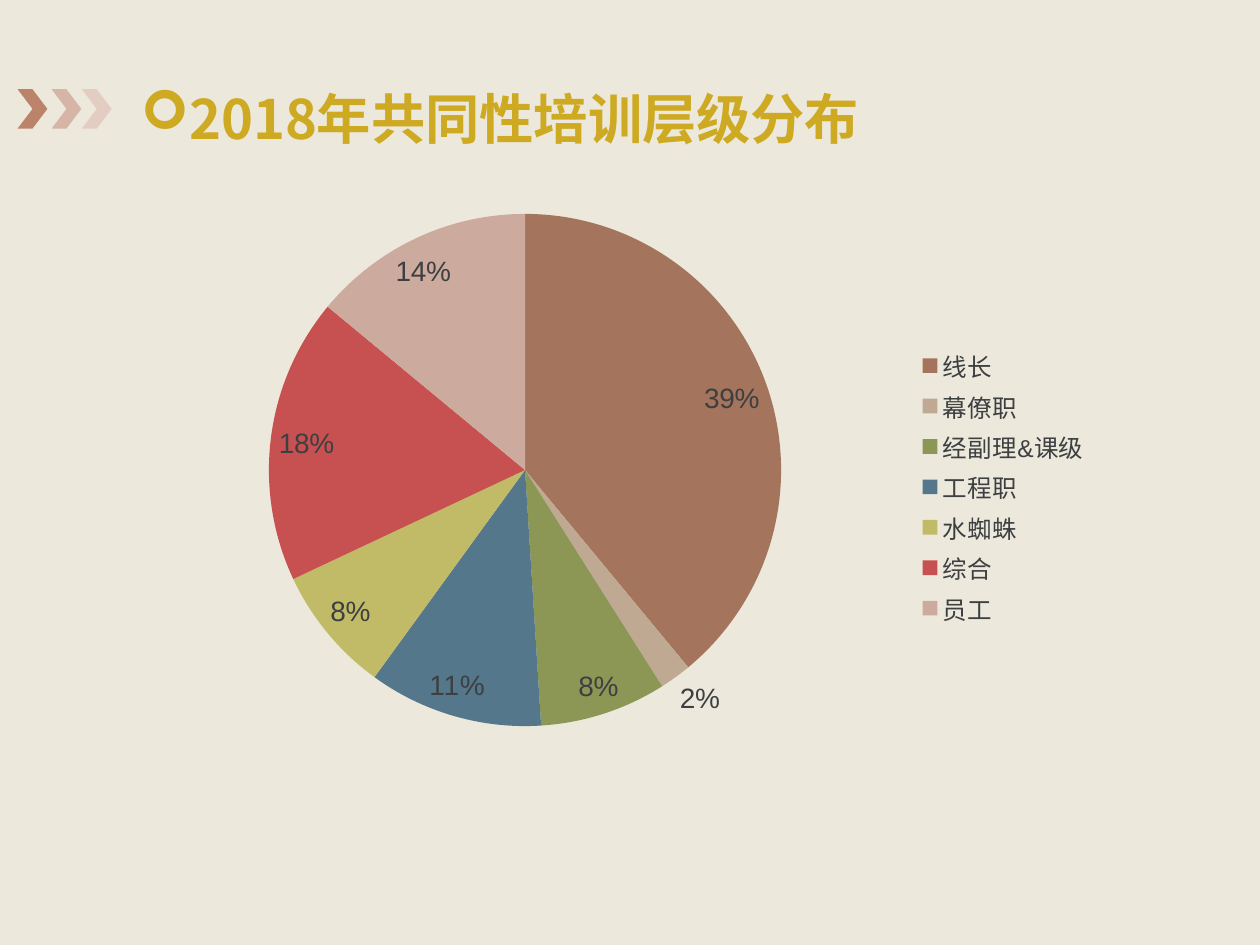
from lxml import etree
from pptx import Presentation
from pptx.chart.data import CategoryChartData
from pptx.dml.color import RGBColor
from pptx.enum.chart import XL_CHART_TYPE, XL_LABEL_POSITION, XL_LEGEND_POSITION
from pptx.enum.shapes import MSO_SHAPE
from pptx.enum.text import MSO_ANCHOR
from pptx.oxml import parse_xml
from pptx.oxml.ns import nsdecls, qn
from pptx.util import Pt

PIE = XL_CHART_TYPE.PIE
BEST_FIT = XL_LABEL_POSITION.BEST_FIT
RIGHT = XL_LEGEND_POSITION.RIGHT
CHEVRON = MSO_SHAPE.CHEVRON
MIDDLE = MSO_ANCHOR.MIDDLE

TITLE = "2018年共同性培训层级分布"
TITLE_FONT = "Noto Sans CJK TC"
CHART_FONT = "Arial"
COLORS = {"background": "ECE8DC", "title": "CEA922", "text": "3D3F41"}
CHEVRONS = [(10.1, "BA836A"), (29.5, "D6B5A6"), (46.8, "E3CDC3")]
LEVELS = [
    ("线长", 0.39, "A4745C"),
    ("幕僚职", 0.02, "C0A993"),
    ("经副理&课级", 0.08, "8C9756"),
    ("工程职", 0.11, "54778B"),
    ("水蜘蛛", 0.08, "C1BB68"),
    ("综合", 0.18, "C75050"),
    ("员工", 0.14, "CCAA9D"),
]
PLOT_LAYOUT = {"x": 0.127, "y": 0.03, "w": 0.537, "h": 0.882}


def rgb(value):
    return RGBColor.from_string(value)


def style_font(font, size, color, name):
    font.size, font.name = Pt(size), name
    font.color.rgb = rgb(color)


def add_chevrons(s):
    for left, color in CHEVRONS:
        sp = s.shapes.add_shape(CHEVRON, Pt(left), Pt(51), Pt(17), Pt(22.5))
        sp.shadow.inherit = False
        sp.fill.solid()
        sp.fill.fore_color.rgb = rgb(color)
        sp.line.fill.background()


def add_title(s):
    sp = s.shapes.add_textbox(Pt(73.4), Pt(39.6), Pt(562.3), Pt(61.9))
    tf = sp.text_frame
    tf.word_wrap = True
    tf.vertical_anchor = MIDDLE
    p = tf.paragraphs[0]
    p.line_spacing = 0.8
    r = p.add_run()
    r.text = TITLE
    style_font(r.font, 31, COLORS["title"], TITLE_FONT)
    r.font.bold = True
    etree.SubElement(r.font._element, qn("a:ea")).set("typeface", TITLE_FONT)
    pPr = p._p.get_or_add_pPr()
    pPr.set("marL", str(Pt(27)))
    pPr.set("indent", str(-Pt(27)))
    etree.SubElement(pPr, qn("a:buFont")).set("typeface", "Wingdings")
    etree.SubElement(pPr, qn("a:buChar")).set("char", "➢")


def add_pie(s):
    data = CategoryChartData(number_format="0%")
    data.categories = [name for name, _, _ in LEVELS]
    data.add_series("Series 1", [share for _, share, _ in LEVELS])
    chart = s.shapes.add_chart(
        PIE, Pt(84.2), Pt(112.3), Pt(545.8), Pt(331.9), data).chart
    style_font(chart.font, 10, COLORS["text"], CHART_FONT)
    chart.has_title = False
    chart.has_legend = True
    chart.legend.position = RIGHT
    chart.legend.include_in_layout = False
    style_font(chart.legend.font, 14, COLORS["text"], CHART_FONT)

    plot = chart.plots[0]
    plot.vary_by_categories = True
    for i, (_, _, color) in enumerate(LEVELS):
        fmt = plot.series[0].points[i].format
        fmt.fill.solid()
        fmt.fill.fore_color.rgb = rgb(color)
        fmt.line.fill.background()

    labels = plot.series[0].data_labels
    labels.show_value = True
    labels.show_percentage = False
    labels.number_format = "0%"
    labels.number_format_is_linked = False
    labels.position = BEST_FIT
    style_font(labels.font, 16, COLORS["text"], CHART_FONT)

    modes = "".join(f'<c:{k}Mode val="edge"/>' for k in "xy")
    places = "".join(f'<c:{k} val="{v}"/>' for k, v in PLOT_LAYOUT.items())
    layout = parse_xml(
        f'<c:layout {nsdecls("c")}><c:manualLayout><c:layoutTarget val="inner"/>'
        f'{modes}{places}</c:manualLayout></c:layout>')
    area = chart._chartSpace.chart.plotArea
    for old in area.findall(qn("c:layout")):
        area.remove(old)
    area.insert(0, layout)


def main():
    prs = Presentation()
    prs.slide_width, prs.slide_height = Pt(720), Pt(540)
    s = prs.slides.add_slide(prs.slide_layouts[6])
    s.background.fill.solid()
    s.background.fill.fore_color.rgb = rgb(COLORS["background"])
    add_chevrons(s)
    add_title(s)
    add_pie(s)
    prs.save("out.pptx")


if __name__ == "__main__":
    main()
